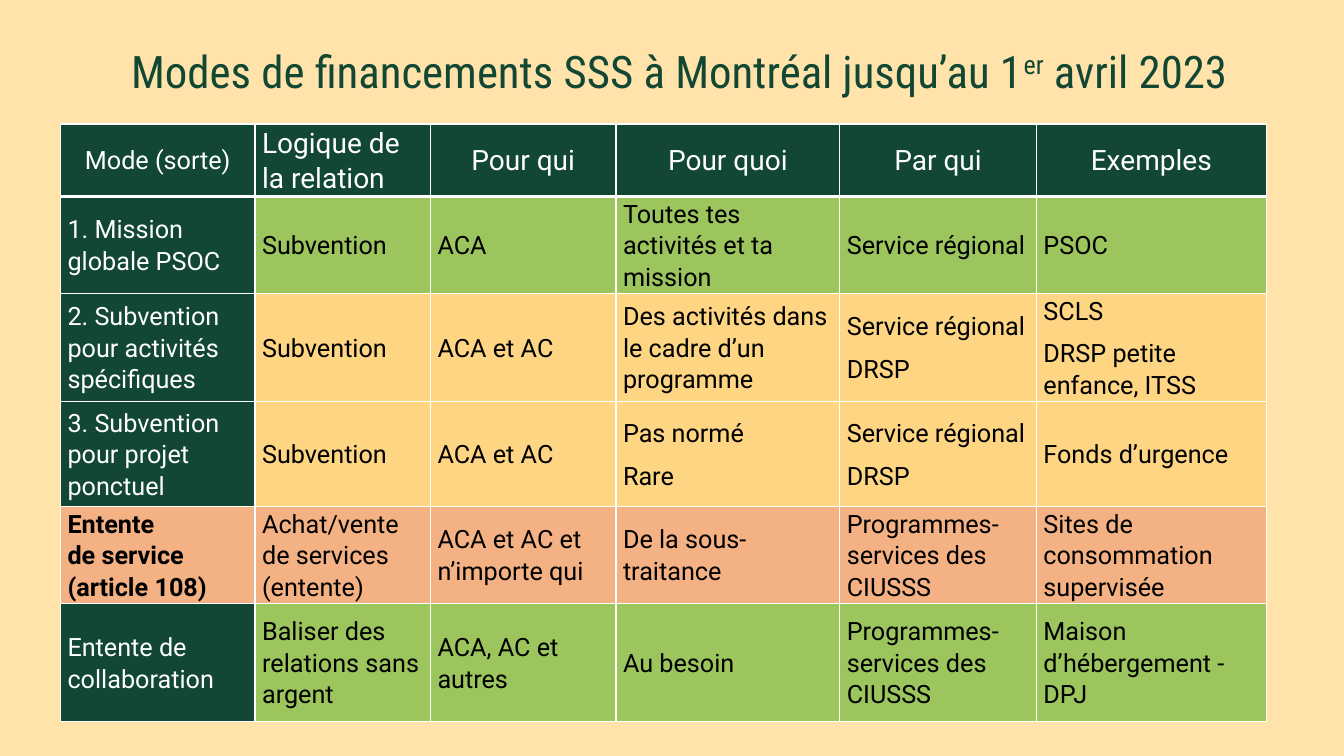
from dataclasses import dataclass

from lxml.etree import SubElement
from pptx import Presentation
from pptx.dml.color import RGBColor
from pptx.enum.text import MSO_ANCHOR, MSO_AUTO_SIZE, PP_ALIGN
from pptx.oxml.ns import qn
from pptx.util import Inches, Pt


@dataclass(frozen=True)
class Theme:
    sand: str = "FFE3AB"
    forest: str = "124733"
    leaf: str = "9CC55D"
    gold: str = "FED583"
    peach: str = "F4B183"
    white: str = "FFFFFF"
    black: str = "000000"
    body: str = "Roboto"
    head: str = "Roboto Condensed"
    title: int = 32
    large: int = 20
    small: int = 18
    thin: float = 1
    thick: float = 3


@dataclass(frozen=True)
class Row:
    height: float
    fill: str
    texts: tuple[str, ...]
    lead: str = Theme.forest
    ink: str = Theme.white
    bold: bool = False


@dataclass(frozen=True)
class Part:
    text: str
    lift: int = 0


THEME = Theme()
WIDTH, HEIGHT = 13.33, 7.5
LEFT, TOP = 0.6, 1.23
COLUMNS = (1.93, 1.74, 1.84, 2.22, 1.95, 2.28)
HEADER = Row(0.72, THEME.forest, (
    "Mode (sorte)", "Logique de \vla relation", "Pour qui",
    "Pour quoi", "Par qui", "Exemples"))
ROWS = (
    HEADER,
    Row(0.92, THEME.leaf, (
        "1. Mission globale PSOC", "Subvention", "ACA",
        "Toutes tes activités et ta mission", "Service régional", "PSOC")),
    Row(1.03, THEME.gold, (
        "2. Subvention pour activités spécifiques", "Subvention", "ACA et AC",
        "Des activités dans le cadre d’un programme",
        "Service régional\nDRSP", "SCLS\nDRSP petite enfance, ITSS")),
    Row(1.04, THEME.gold, (
        "3. Subvention pour projet ponctuel", "Subvention", "ACA et AC",
        "Pas normé\nRare", "Service régional\nDRSP", "Fonds d’urgence")),
    Row(0.92, THEME.peach, (
        "Entente \vde service (article 108)", "Achat/vente \vde services (entente)",
        "ACA et AC et n’importe qui", "De la sous-traitance",
        "Programmes-services des CIUSSS", "Sites de consommation supervisée"),
        lead=THEME.peach, ink=THEME.black, bold=True),
    Row(1.17, THEME.leaf, (
        "Entente de collaboration", "Baliser des relations sans argent",
        "ACA, AC et autres", "Au besoin",
        "Programmes-services des CIUSSS", "Maison d’hébergement - DPJ")),
)
TITLE = (
    Part("Modes de financements SSS à Montréal jusqu’au 1"),
    Part("er", 30),
    Part(" avril 2023"),
)


def style(font, name: str, size: int, ink: str, bold: bool = False) -> None:
    font.name = name
    font.size = Pt(size)
    font.bold = bold
    font.color.rgb = RGBColor.from_string(ink)


def edge(cell, side: str, width: float) -> None:
    line = SubElement(cell._tc.get_or_add_tcPr(), qn(f"a:ln{side}"), w=str(Pt(width)))
    fill = SubElement(line, qn("a:solidFill"))
    SubElement(fill, qn("a:srgbClr"), val=THEME.white)


def draw_cell(cell, row: Row, y: int, x: int) -> None:
    top = y == 0
    for side in "LRTB":
        heavy = (top and side == "B") or (y == 1 and side == "T")
        edge(cell, side, THEME.thick if heavy else THEME.thin)
    cell.fill.solid()
    cell.fill.fore_color.rgb = RGBColor.from_string(row.fill if x else row.lead)
    cell.vertical_anchor = MSO_ANCHOR.MIDDLE
    cell.margin_left = cell.margin_right = Inches(0.07)
    cell.margin_top = cell.margin_bottom = 0
    cell.text_frame.text = row.texts[x]
    size = THEME.large if top and x else THEME.small
    ink = THEME.white if top else THEME.black if x else row.ink
    for para in cell.text_frame.paragraphs:
        para.alignment = PP_ALIGN.CENTER if top and x != 1 else PP_ALIGN.LEFT
        para.line_spacing = 1.07
        para.space_after = Pt(8)
        for run in para.runs:
            style(run.font, THEME.body, size, ink, row.bold and x == 0)


def draw_table(slide) -> None:
    frame = slide.shapes.add_table(
        len(ROWS), len(COLUMNS), Inches(LEFT), Inches(TOP),
        Inches(sum(COLUMNS)), Inches(sum(row.height for row in ROWS)))
    table = frame.table
    table.horz_banding = False
    for x, width in enumerate(COLUMNS):
        table.columns[x].width = Inches(width)
    for y, row in enumerate(ROWS):
        table.rows[y].height = Inches(row.height)
        for x in range(len(COLUMNS)):
            draw_cell(table.cell(y, x), row, y, x)


def draw_title(slide) -> None:
    title = slide.shapes.title
    title.left, title.top = Inches(1.2), Inches(0.38)
    title.width, title.height = Inches(11.71), Inches(0.64)
    frame = title.text_frame
    frame.word_wrap = True
    frame.auto_size = MSO_AUTO_SIZE.SHAPE_TO_FIT_TEXT
    frame.vertical_anchor = MSO_ANCHOR.TOP
    para = frame.paragraphs[0]
    para.alignment = PP_ALIGN.LEFT
    for part in TITLE:
        run = para.add_run()
        run.text = part.text
        style(run.font, THEME.head, THEME.title, THEME.forest)
        if part.lift:
            run._r.get_or_add_rPr().set("baseline", str(part.lift * 1000))


def main() -> None:
    deck = Presentation()
    deck.slide_width, deck.slide_height = Inches(WIDTH), Inches(HEIGHT)
    slide = deck.slides.add_slide(deck.slide_layouts[5])
    slide.background.fill.solid()
    slide.background.fill.fore_color.rgb = RGBColor.from_string(THEME.sand)
    draw_table(slide)
    draw_title(slide)
    deck.save("out.pptx")


if __name__ == "__main__":
    main()
